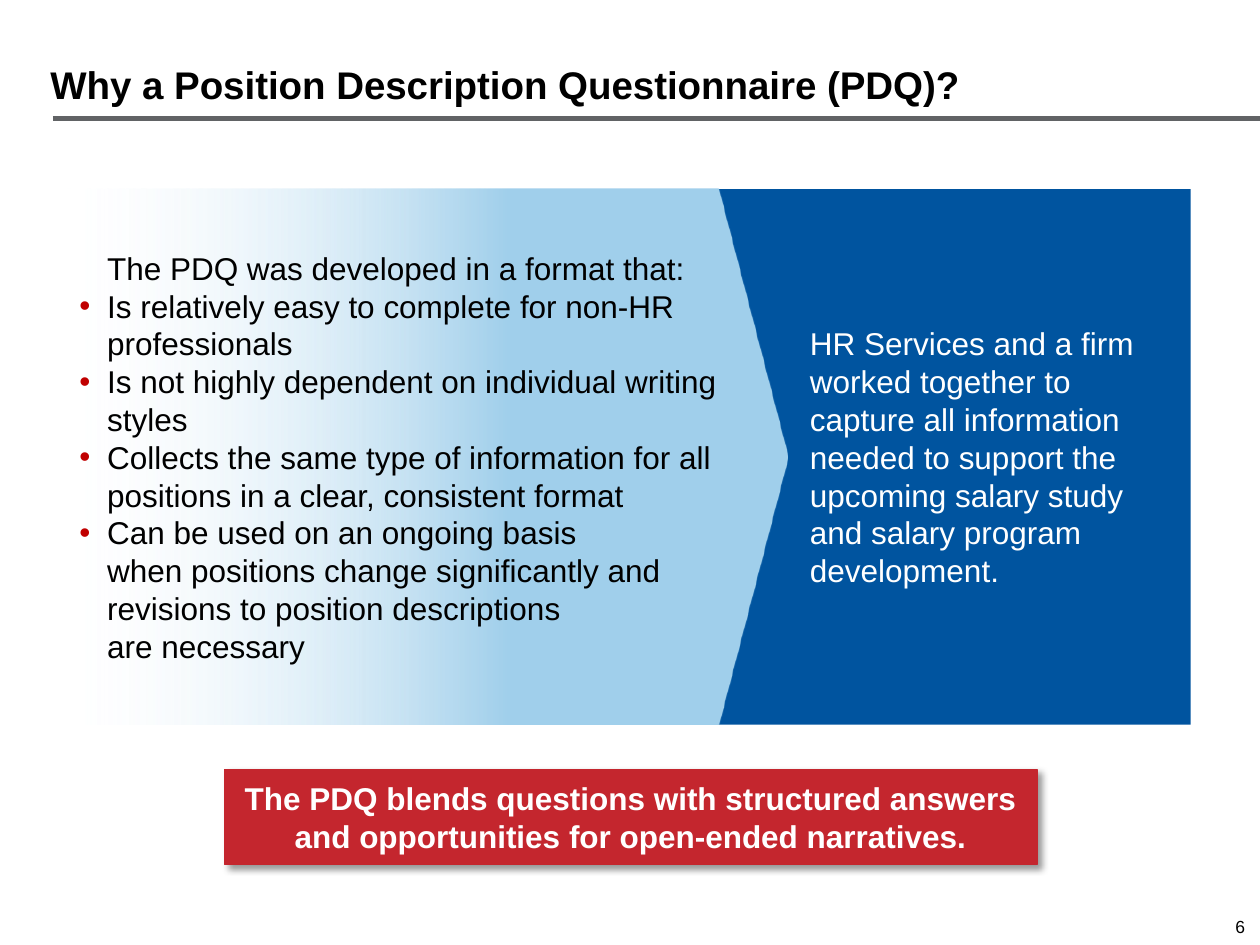
from lxml import etree
from pptx import Presentation
from pptx import util as u
from pptx.dml.color import RGBColor
from pptx.enum import shapes, text
from pptx.oxml import parse_xml
from pptx.oxml.ns import nsdecls, qn

COLORS = {
    "black": "000000", "white": "FFFFFF", "rule": "616365", "navy": "00549F",
    "sky": "A0CFEB", "red": "C4262E", "bullet": "C00000",
}
PANEL_TOP, PANEL_HEIGHT = 1.5, 4.25
LIST_INDENT = 0.22

INTRO = "The PDQ was developed in a format that:"
FEATURES = [
    "Is relatively easy to complete for non-HR professionals",
    "Is not highly dependent on individual writing styles",
    "Collects the same type of information for all positions in a clear, consistent format",
    "Can be used on an ongoing basis\vwhen positions change significantly and\v"
    "revisions to position descriptions\vare necessary",
]
PARTNERS = ("HR Services and a firm worked together to\vcapture all information needed "
            "to support the upcoming salary study and salary program development.")
SUMMARY = ("The PDQ blends questions with structured answers "
           "and opportunities for open-ended narratives.")


def rgb(name):
    return RGBColor.from_string(COLORS[name])


def apply(target, formats):
    for name, value in formats.items():
        setattr(target, name, value)


def box(left, top, width, height):
    return [u.Inches(length) for length in (left, top, width, height)]


def set_frame(shape, anchor=text.MSO_ANCHOR.MIDDLE, margins=(0.1, 0.05, 0.1, 0.05)):
    frame = shape.text_frame
    sides = ("margin_left", "margin_top", "margin_right", "margin_bottom")
    apply(frame, dict(zip(sides, map(u.Inches, margins)),
                      word_wrap=True, auto_size=text.MSO_AUTO_SIZE.NONE,
                      vertical_anchor=anchor))
    return frame


def write(paragraph, words, color, size=18, bold=False,
          align=text.PP_ALIGN.LEFT, spacing=1.0):
    paragraph.text = words
    apply(paragraph, {"alignment": align, "line_spacing": spacing})
    for run in paragraph.runs:
        apply(run.font, {"name": "Arial", "size": u.Pt(size), "bold": bold})
        run.font.color.rgb = rgb(color)


def indent(paragraph, left, first=0):
    properties = paragraph._p.get_or_add_pPr()
    properties.set("marL", str(u.Inches(left)))
    properties.set("indent", str(u.Inches(first)))
    return properties


def add_bullet(paragraph):
    properties = indent(paragraph, LIST_INDENT, -LIST_INDENT)
    color = etree.SubElement(properties, qn("a:buClr"))
    etree.SubElement(color, qn("a:srgbClr"), val=COLORS["bullet"])
    etree.SubElement(properties, qn("a:buFont"), typeface="Arial")
    etree.SubElement(properties, qn("a:buChar"), char="•")


def add_panel(slide, kind, place, fill=None):
    panel = slide.shapes.add_shape(kind, *box(*place))
    panel.shadow.inherit = False
    panel.line.fill.background()
    if fill:
        panel.fill.solid()
        panel.fill.fore_color.rgb = rgb(fill)
    return panel


def fade_in(panel, start, end, end_position):
    """Fill from a fully transparent start colour at the left edge."""
    panel.fill.gradient()
    panel.fill.gradient_angle = 0
    stops = panel.fill.gradient_stops
    for stop, color, position in zip(stops, (start, end), (0, end_position)):
        stop.color.rgb = rgb(color)
        stop.position = position
    first_color = panel._element.spPr.find(".//" + qn("a:srgbClr"))
    etree.SubElement(first_color, qn("a:alpha"), val="0")


def add_drop_shadow(panel):
    effects = panel._element.spPr.find(qn("a:effectLst"))
    effects.append(parse_xml(
        f'<a:outerShdw {nsdecls("a")} blurRad="{u.Pt(4)}" dist="{u.Pt(3)}" '
        f'dir="2700000" algn="tl" rotWithShape="0"><a:srgbClr val="{COLORS["black"]}">'
        '<a:alpha val="40000"/></a:srgbClr></a:outerShdw>'))


def add_title(slide, words):
    title = slide.shapes.title
    apply(title, dict(zip(("left", "top", "width", "height"), box(0.3, 0.08, 9.53, 0.83))))
    frame = set_frame(title, text.MSO_ANCHOR.BOTTOM)
    write(frame.paragraphs[0], words, "black", size=22, bold=True, spacing=0.9)


def add_title_rule(slide):
    rule = slide.shapes.add_connector(
        shapes.MSO_CONNECTOR.STRAIGHT, *box(0.42, 0.94, 10, 0.94))
    rule.line.color.rgb = rgb("rule")
    rule.line.width = u.Pt(3)
    etree.SubElement(rule._element.spPr, qn("a:effectLst"))


def add_page_number(slide, number):
    frame = set_frame(slide.shapes.add_textbox(*box(9.38, 7.24, 0.6, 0.25)))
    write(frame.paragraphs[0], number, "black", size=10,
          align=text.PP_ALIGN.RIGHT, spacing=0.9)


def add_partners(slide):
    panel = add_panel(slide, shapes.MSO_SHAPE.PENTAGON,
                      (5.58, PANEL_TOP, 3.87, PANEL_HEIGHT), "navy")
    panel.adjustments[0] = 0
    paragraph = set_frame(panel).paragraphs[0]
    indent(paragraph, 0.75)
    write(paragraph, PARTNERS, "white")


def add_features(slide):
    panel = add_panel(slide, shapes.MSO_SHAPE.PENTAGON,
                      (0.43, PANEL_TOP, 5.82, PANEL_HEIGHT))
    panel.adjustments[0] = 0.13
    fade_in(panel, "white", "sky", 0.62)
    frame = set_frame(panel, margins=(0.2, 0.05, 0.1, 0.05))
    intro = frame.paragraphs[0]
    indent(intro, LIST_INDENT)
    write(intro, INTRO, "black")
    for feature in FEATURES:
        paragraph = frame.add_paragraph()
        add_bullet(paragraph)
        write(paragraph, feature, "black")


def add_summary(slide):
    banner = add_panel(slide, shapes.MSO_SHAPE.RECTANGLE, (1.78, 6.11, 6.45, 0.75), "red")
    banner.line.color.rgb = rgb("red")
    banner.line.width = u.Pt(0.75)
    add_drop_shadow(banner)
    frame = set_frame(banner, margins=(0.07,) * 4)
    write(frame.paragraphs[0], SUMMARY, "white", bold=True, align=text.PP_ALIGN.CENTER)


def main():
    deck = Presentation()
    apply(deck, {"slide_width": u.Inches(10), "slide_height": u.Inches(7.5)})
    slide = deck.slides.add_slide(deck.slide_layouts.get_by_name("Title Only"))
    add_page_number(slide, "6")
    add_title_rule(slide)
    add_title(slide, "Why a Position Description Questionnaire (PDQ)?")
    add_partners(slide)
    add_features(slide)
    add_summary(slide)
    deck.save("out.pptx")


if __name__ == "__main__":
    main()
